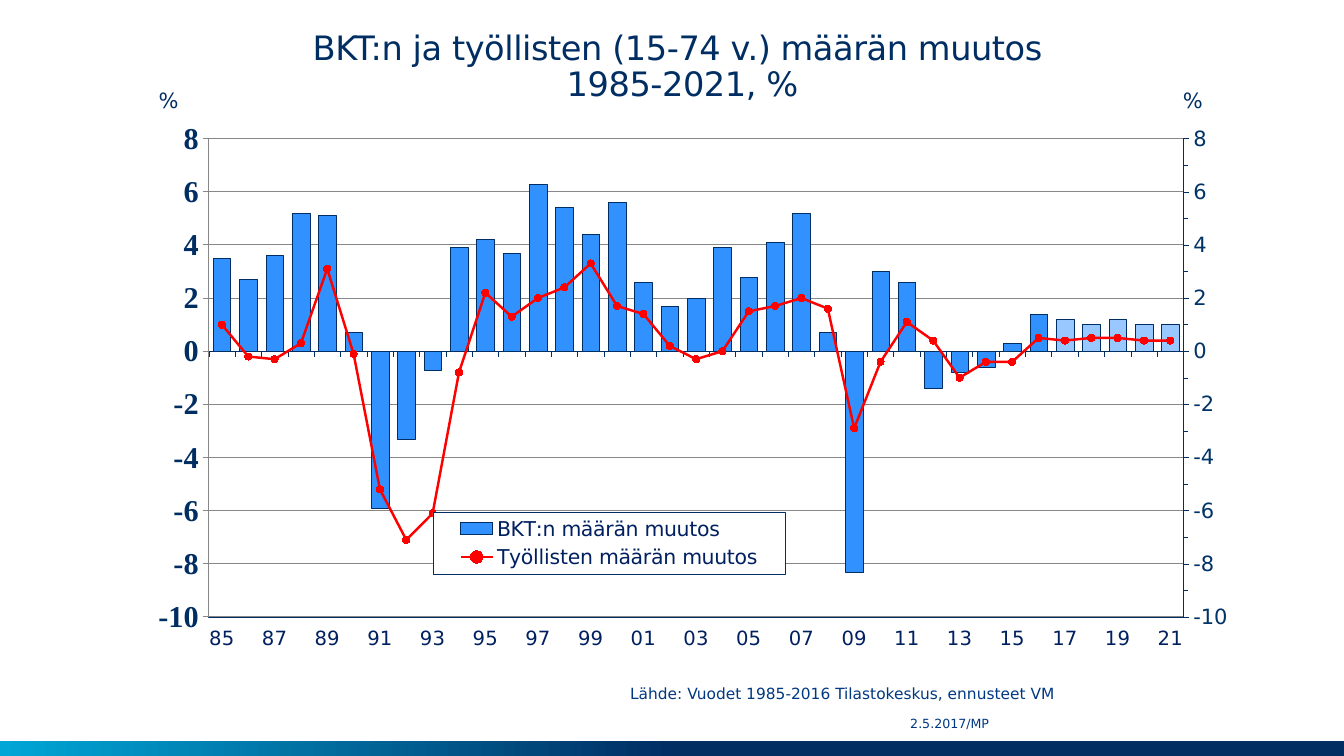
from dataclasses import dataclass

from pptx import Presentation
from pptx.chart.axis import ValueAxis
from pptx.chart.chart import Chart
from pptx.chart.data import CategoryChartData
from pptx.dml.color import RGBColor
from pptx.dml.line import LineFormat
from pptx.enum.chart import (XL_CHART_TYPE, XL_LEGEND_POSITION, XL_MARKER_STYLE,
                             XL_TICK_LABEL_POSITION, XL_TICK_MARK)
from pptx.enum.dml import MSO_LINE
from pptx.enum.shapes import MSO_SHAPE
from pptx.enum.text import MSO_ANCHOR, MSO_AUTO_SIZE, PP_ALIGN
from pptx.oxml import parse_xml
from pptx.oxml.ns import nsdecls, qn
from pptx.slide import Slide
from pptx.text.text import Font
from pptx.util import Cm, Pt

NAVY = RGBColor(0x00, 0x2E, 0x63)
CYAN = RGBColor(0x00, 0xA6, 0xD6)
NOTE_BLUE = RGBColor(0x00, 0x38, 0x82)
LABEL_BLUE = RGBColor(0x00, 0x20, 0x60)
SCALE_BLUE = RGBColor(0x00, 0x33, 0x66)
GDP_BLUE = RGBColor(0x31, 0x91, 0xFF)
FORECAST_BLUE = RGBColor(0x98, 0xC8, 0xFF)
JOBS_RED = RGBColor(0xFF, 0x00, 0x00)
MARKER_RED = RGBColor(0xFF, 0x00, 0x66)
SANS = "DejaVu Sans"

YEARS = [f"{year % 100:02d}" if year % 2 else "" for year in range(1985, 2022)]
FORECAST_START = 2017 - 1985
GDP_CHANGE = [3.5, 2.7, 3.6, 5.2, 5.1, 0.7, -5.9, -3.3, -0.7, 3.9, 4.2, 3.7, 6.3,
              5.4, 4.4, 5.6, 2.6, 1.7, 2, 3.9, 2.8, 4.1, 5.2, 0.7, -8.3, 3, 2.6,
              -1.4, -0.8, -0.6, 0.3, 1.4, 1.2, 1, 1.2, 1, 1]
JOBS_CHANGE = [1, -0.2, -0.3, 0.3, 3.1, -0.1, -5.2, -7.1, -6.1, -0.8, 2.2, 1.3, 2,
               2.4, 3.3, 1.7, 1.4, 0.2, -0.3, 0, 1.5, 1.7, 2, 1.6, -2.9, -0.4, 1.1,
               0.4, -1, -0.4, -0.4, 0.5, 0.4, 0.5, 0.5, 0.4, 0.4]


@dataclass
class Note:
    """A short text with its place in centimetres."""
    text: str
    left: float
    top: float
    width: float
    height: float
    size: float
    color: RGBColor
    centred: bool = True


NOTES = [
    Note("2.5.2017/MP", 22.94, 17.98, 5.16, 0.48, 9, NOTE_BLUE, False),
    Note("Lähde: Vuodet 1985-2016 Tilastokeskus, ennusteet VM",
         15.57, 17.25, 11.33, 0.48, 11, NOTE_BLUE),
    Note("%", 29.77, 2.21, 0.58, 0.64, 15, NAVY),
    Note("%", 3.96, 2.21, 0.58, 0.64, 15, NAVY),
]


def style_font(font: Font, size: float, color: RGBColor) -> None:
    """Set the sans face, size and colour."""
    font.name, font.size, font.bold = SANS, Pt(size), False
    font.color.rgb = color


def style_line(line: LineFormat, color: RGBColor, width: float) -> None:
    """Set a line's colour and width."""
    line.color.rgb = color
    line.width = Pt(width)


def add_note(slide: Slide, note: Note) -> None:
    """Write one note on the slide."""
    box = slide.shapes.add_textbox(Cm(note.left), Cm(note.top), Cm(note.width), Cm(note.height))
    frame = box.text_frame
    frame.margin_left = frame.margin_right = frame.margin_top = frame.margin_bottom = 0
    frame.word_wrap = not note.centred
    frame.auto_size = MSO_AUTO_SIZE.SHAPE_TO_FIT_TEXT if note.centred else MSO_AUTO_SIZE.NONE
    frame.vertical_anchor = MSO_ANCHOR.TOP if note.centred else MSO_ANCHOR.MIDDLE
    frame.text = note.text
    paragraph = frame.paragraphs[0]
    paragraph.alignment = PP_ALIGN.CENTER if note.centred else PP_ALIGN.LEFT
    style_font(paragraph.runs[0].font, note.size, note.color)


def add_footer_band(slide: Slide) -> None:
    """Draw the gradient band along the bottom edge."""
    band = slide.shapes.add_shape(MSO_SHAPE.RECTANGLE, 0, Cm(18.67), Cm(33.87), Cm(0.38))
    band.shadow.inherit = False
    band.line.fill.background()
    band.fill.gradient()
    band.fill.gradient_angle = 180
    for stop, (color, position) in zip(band.fill.gradient_stops, [(NAVY, 0.5), (CYAN, 1)]):
        stop.color.rgb = color
        stop.position = position


def write_title(slide: Slide) -> None:
    """Place and format the title."""
    title = slide.shapes.title
    title.left, title.top, title.width, title.height = Cm(5.54), Cm(0.33), Cm(23.06), Cm(2.41)
    frame = title.text_frame
    frame.margin_left = frame.margin_right = 0
    frame.word_wrap = True
    frame.auto_size = MSO_AUTO_SIZE.NONE
    frame.vertical_anchor = MSO_ANCHOR.BOTTOM
    frame.text = "BKT:n ja työllisten (15-74 v.) määrän muutos\v 1985-2021, %"
    paragraph = frame.paragraphs[0]
    paragraph.alignment = PP_ALIGN.CENTER
    paragraph.line_spacing = 0.9
    for run in paragraph.runs:
        style_font(run.font, 24, NAVY)
        run._r.get_or_add_rPr().set("spc", "-30")


def layout_xml(x: float, y: float, w: float, h: float, inner: bool = False):
    """Return a manual chart layout in fractions of the chart."""
    target = '<c:layoutTarget val="inner"/>' if inner else ""
    return parse_xml(
        f'<c:layout {nsdecls("c")}><c:manualLayout>{target}'
        '<c:xMode val="edge"/><c:yMode val="edge"/>'
        f'<c:x val="{x}"/><c:y val="{y}"/><c:w val="{w}"/><c:h val="{h}"/>'
        '</c:manualLayout></c:layout>')


def frame_xml(fill: str, width: float):
    """Return a navy outline with the given fill element."""
    return parse_xml(
        f'<c:spPr {nsdecls("c", "a")}>{fill}<a:ln w="{Pt(width)}">'
        f'<a:solidFill><a:srgbClr val="{NAVY}"/></a:solidFill></a:ln></c:spPr>')


def style_value_axis(axis: ValueAxis, number_format: str, minor_tick: XL_TICK_MARK) -> None:
    """Give a percentage axis its scale, ticks and labels."""
    axis.minimum_scale, axis.maximum_scale = -10, 8
    axis.major_unit, axis.minor_unit = 2, 1
    axis.major_tick_mark = XL_TICK_MARK.OUTSIDE
    axis.minor_tick_mark = minor_tick
    axis.tick_label_position = XL_TICK_LABEL_POSITION.NEXT_TO_AXIS
    axis.tick_labels.number_format = number_format
    axis.tick_labels.number_format_is_linked = False
    style_font(axis.tick_labels.font, 15, SCALE_BLUE)
    style_line(axis.format.line, NAVY, 0.3)


def remove_children(parent, tag: str) -> None:
    """Remove every direct child with the given tag."""
    for child in parent.findall(qn(tag)):
        parent.remove(child)


def move_jobs_to_right_axis(chart: Chart) -> ValueAxis:
    """Turn the second series into a line on a right axis and return that axis."""
    bars = chart.plots[0]._element
    jobs = bars.findall(qn("c:ser"))[1]
    area = bars.getparent()
    remove_children(jobs, "c:invertIfNegative")
    line_plot = parse_xml(
        f'<c:lineChart {nsdecls("c")}><c:grouping val="standard"/><c:varyColors val="0"/>'
        '<c:marker val="1"/><c:axId val="111"/><c:axId val="112"/></c:lineChart>')
    line_plot.insert(2, jobs)
    bars.addnext(line_plot)

    def axis_xml(tag: str, own: int, other: int, deleted: int, side: str, crosses: str):
        return parse_xml(
            f'<c:{tag} {nsdecls("c")}><c:axId val="{own}"/>'
            '<c:scaling><c:orientation val="minMax"/></c:scaling>'
            f'<c:delete val="{deleted}"/><c:axPos val="{side}"/>'
            f'<c:crossAx val="{other}"/><c:crosses val="{crosses}"/></c:{tag}>')

    right = axis_xml("valAx", 112, 111, 0, "r", "max")
    area.find(qn("c:valAx")).addnext(right)
    right.addnext(axis_xml("catAx", 111, 112, 1, "b", "autoZero"))
    remove_children(area, "c:layout")
    area.insert(0, layout_xml(0.07, 0.031, 0.891, 0.907, inner=True))
    area.append(frame_xml("<a:noFill/>", 1))
    return ValueAxis(right)


def add_legend(chart: Chart) -> None:
    """Place the framed legend inside the plot."""
    chart.has_legend = True
    legend = chart.legend
    legend.position = XL_LEGEND_POSITION.RIGHT
    legend.include_in_layout = False
    style_font(legend.font, 14.6, LABEL_BLUE)
    element = legend._element
    remove_children(element, "c:layout")
    element.find(qn("c:legendPos")).addnext(layout_xml(0.275, 0.739, 0.322, 0.117))
    white = '<a:solidFill><a:srgbClr val="FFFFFF"/></a:solidFill>'
    element.find(qn("c:overlay")).addnext(frame_xml(white, 0.25))


def add_change_chart(slide: Slide) -> None:
    """Draw GDP change as columns and employment change as a line."""
    data = CategoryChartData()
    data.categories = YEARS
    data.add_series("BKT:n määrän muutos", GDP_CHANGE)
    data.add_series("Työllisten määrän muutos", JOBS_CHANGE)
    chart = slide.shapes.add_chart(XL_CHART_TYPE.COLUMN_CLUSTERED, Cm(3.33), Cm(3.07),
                                   Cm(27.61), Cm(13.31), data).chart
    chart.has_title = False
    chart.font.name, chart.font.size, chart.font.bold = "Times New Roman", Pt(21.6), True
    chart.font.color.rgb = NAVY
    right_axis = move_jobs_to_right_axis(chart)
    columns, lines = chart.plots
    columns.vary_by_categories = False
    columns.gap_width = 50
    gdp, jobs = columns.series[0], lines.series[0]
    gdp.invert_if_negative = False
    forecasts = [gdp.points[i] for i in range(FORECAST_START, len(YEARS))]
    for part, color in [(gdp, GDP_BLUE)] + [(point, FORECAST_BLUE) for point in forecasts]:
        part.format.fill.solid()
        part.format.fill.fore_color.rgb = color
        style_line(part.format.line, NAVY, 0.25)
    jobs.smooth = False
    style_line(jobs.format.line, JOBS_RED, 1.75)
    jobs.marker.style, jobs.marker.size = XL_MARKER_STYLE.CIRCLE, 5
    jobs.marker.format.fill.solid()
    jobs.marker.format.fill.fore_color.rgb = MARKER_RED
    style_line(jobs.marker.format.line, JOBS_RED, 0.75)
    years = chart.category_axis
    years.tick_label_position = XL_TICK_LABEL_POSITION.LOW
    years.major_tick_mark = XL_TICK_MARK.OUTSIDE
    style_font(years.tick_labels.font, 14, LABEL_BLUE)
    style_line(years.format.line, NAVY, 0.3)
    style_value_axis(chart.value_axis, "0", XL_TICK_MARK.INSIDE)
    style_value_axis(right_axis, "#,##0", XL_TICK_MARK.OUTSIDE)
    chart.value_axis.has_major_gridlines = True
    grid = chart.value_axis.major_gridlines.format.line
    style_line(grid, NAVY, 0.25)
    grid.dash_style = MSO_LINE.ROUND_DOT
    add_legend(chart)


def main() -> None:
    """Build the slide and save it."""
    deck = Presentation()
    deck.slide_width, deck.slide_height = Cm(33.87), Cm(19.05)
    slide = deck.slides.add_slide(deck.slide_layouts[5])
    add_footer_band(slide)
    write_title(slide)
    add_change_chart(slide)
    for note in NOTES:
        add_note(slide, note)
    deck.save("out.pptx")


if __name__ == "__main__":
    main()
